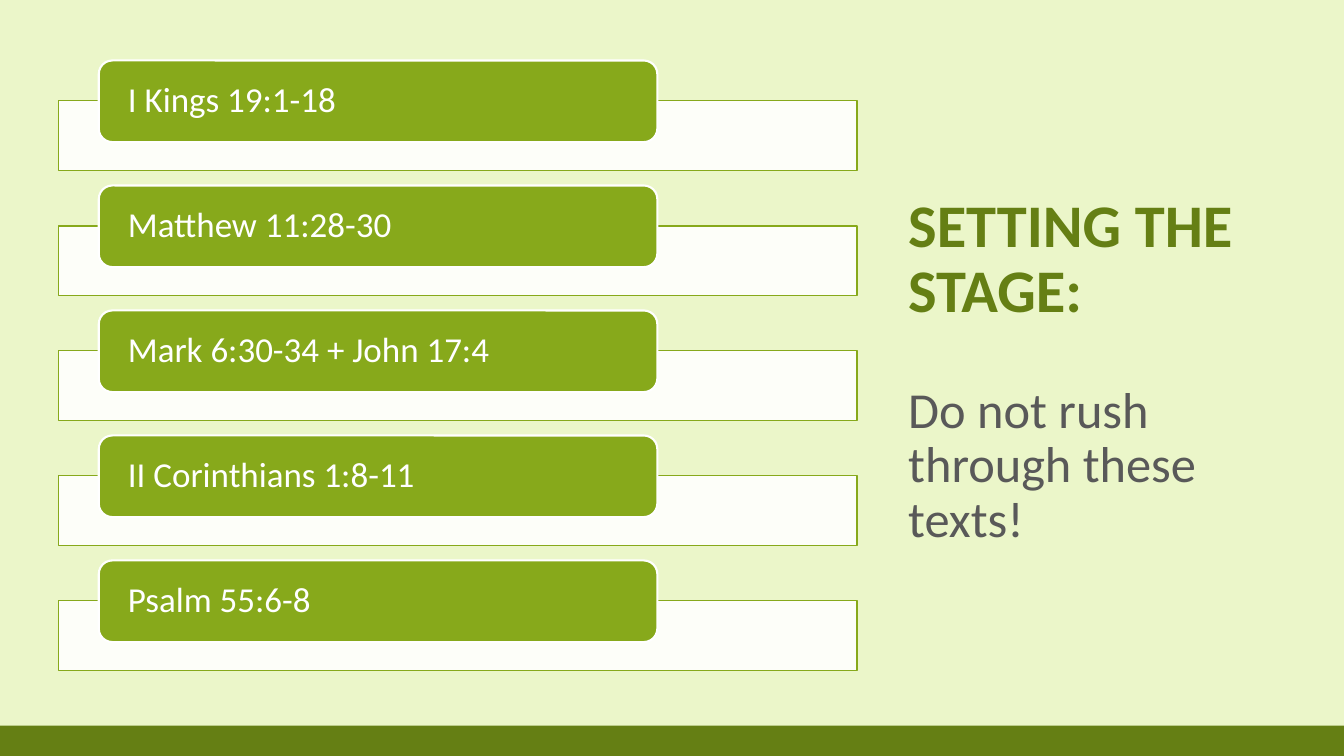
from pptx import Presentation
from pptx.dml.color import RGBColor
from pptx.enum.shapes import MSO_SHAPE as Shape
from pptx.enum.text import MSO_ANCHOR as Anchor, PP_ALIGN as Align
from pptx.oxml.ns import qn
from pptx.util import Inches, Pt
from lxml import etree

GREEN, DARK_GREEN, WHITE = "87A91B", "657F14", "FFFFFF"


def paint(color_format, color):
    color_format.solid()
    color_format.fore_color.rgb = RGBColor.from_string(color)


def write(box, text, size, color, bold=False, anchor=Anchor.TOP, inset=0.1, margin=0.05):
    frame = box.text_frame
    frame.word_wrap = True
    frame.vertical_anchor = anchor
    frame.margin_left = frame.margin_right = Inches(inset)
    frame.margin_top = frame.margin_bottom = Inches(margin)
    para = frame.paragraphs[0]
    para.alignment = Align.LEFT
    para.line_spacing = 0.9
    span = para.add_run()
    span.text = text
    span.font.name = "Calibri"
    span.font.size = Pt(size)
    span.font.bold = bold
    paint(span.font.fill, color)


deck = Presentation()
deck.slide_width, deck.slide_height = Inches(13.33), Inches(7.5)
page = deck.slides.add_slide(deck.slide_layouts[6])
paint(page.background.fill, "EBF6C9")

# Footer band
band = page.shapes.add_shape(Shape.RECTANGLE, 0, Inches(7.2), deck.slide_width, Inches(0.3))
band.shadow.inherit = False
paint(band.fill, DARK_GREEN)
band.line.fill.background()

# Title and instruction
title = page.shapes.add_textbox(Inches(8.91), Inches(1.83), Inches(3.84), Inches(1.45))
write(title, "SETTING THE STAGE:", 43.2, DARK_GREEN, bold=True, anchor=Anchor.BOTTOM)
advice = page.shapes.add_textbox(Inches(8.91), Inches(3.77), Inches(3.84), Inches(2.98))
write(advice, "Do not rush through these texts!", 36, "595959")

# Scripture list: a pale panel behind each green label
readings = ["I Kings 19:1-18", "Matthew 11:28-30", "Mark 6:30-34 + John 17:4",
            "II Corinthians 1:8-11", "Psalm 55:6-8"]
for index, reading in enumerate(readings):
    top = 0.6 + 1.24 * index
    panel = page.shapes.add_shape(Shape.RECTANGLE, Inches(0.58), Inches(top + 0.4),
                                  Inches(7.92), Inches(0.69))
    label = page.shapes.add_shape(Shape.ROUNDED_RECTANGLE, Inches(0.98), Inches(top),
                                  Inches(5.54), Inches(0.81))
    for box, fill, line, width in ((panel, WHITE, GREEN, 1), (label, GREEN, WHITE, 1.5)):
        box.shadow.inherit = False
        paint(box.fill, fill)
        paint(box.line.fill, line)
        box.line.width = Pt(width)
    panel_color = panel.fill._xPr.find(qn("a:solidFill"))[0]
    etree.SubElement(panel_color, qn("a:alpha"), val="90000")
    write(label, reading, 25, WHITE, anchor=Anchor.MIDDLE, inset=0.25, margin=0)

deck.save("out.pptx")
